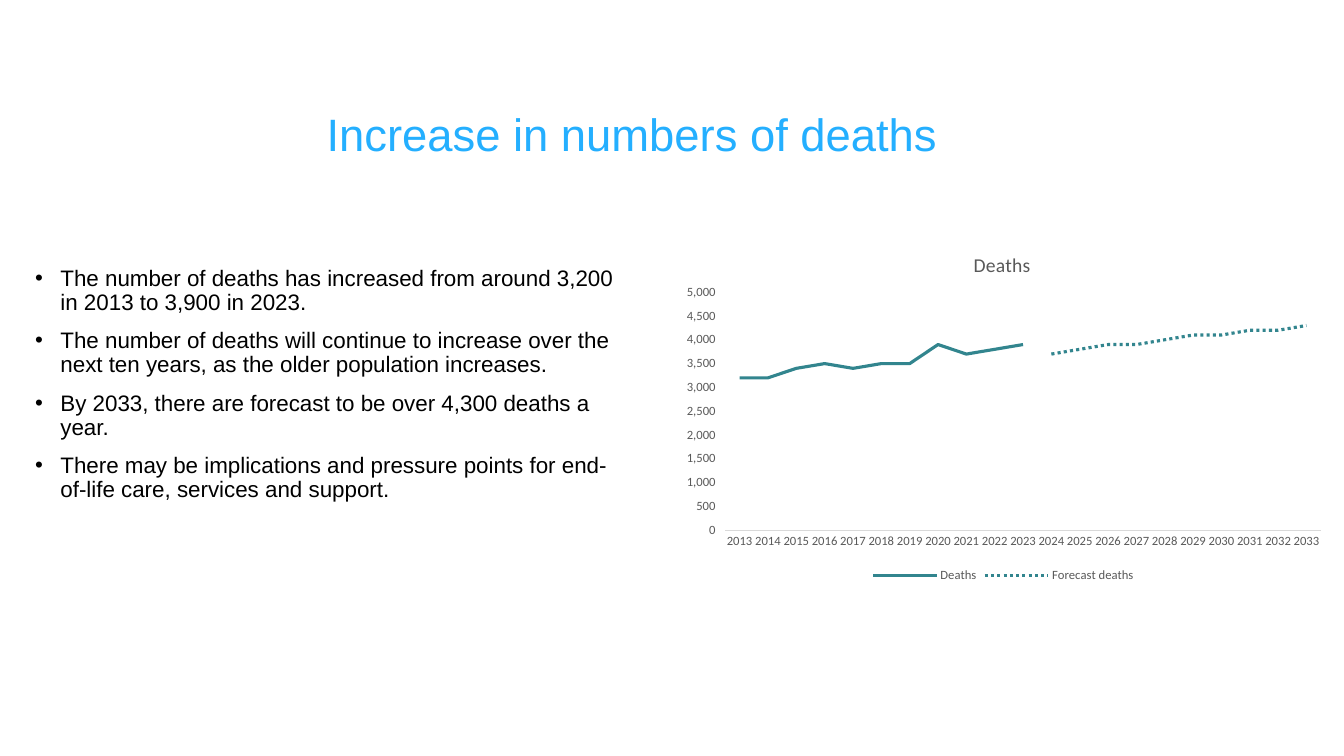
from lxml.etree import SubElement
from pptx import Presentation
from pptx.chart.data import CategoryChartData
from pptx.dml.color import RGBColor
from pptx.enum.chart import XL_CHART_TYPE as ChartType
from pptx.enum.chart import XL_LEGEND_POSITION as LegendPosition
from pptx.enum.chart import XL_TICK_MARK as TickMark
from pptx.enum.dml import MSO_LINE_DASH_STYLE as Dash
from pptx.enum.text import MSO_ANCHOR as Anchor
from pptx.oxml import parse_xml
from pptx.oxml.ns import nsdecls, qn
from pptx.util import Inches, Pt

TEAL, GREY = "32858E", "595959"
TITLE_BOX = (23.56, 15.2, 74.72, 5.87)
BULLET_BOX = (1.88, 34.67, 45.31, 36.27)
CHART_BOX = (50.04, 30.4, 49.21, 47.2)
POINTS = (
    "The number of deaths has increased from around 3,200 in 2013 to 3,900 in 2023.",
    "The number of deaths will continue to increase over the next ten years, as the older population increases.",
    "By 2033, there are forecast to be over 4,300 deaths a year.",
    "There may be implications and pressure points for end-of-life care, services and support.",
)
RECORDED = [3200, 3200, 3400, 3500, 3400, 3500, 3500, 3900, 3700, 3800, 3900]
FORECAST = [3700, 3800, 3900, 3900, 4000, 4100, 4100, 4200, 4200, 4300]


def colour(value):
    """Turn a hex string into a colour."""
    return RGBColor.from_string(value)


def apply(target, **values):
    """Set each named format value on the target."""
    for name, value in values.items():
        setattr(target, name, value)


def style_font(font, size, shade, name):
    """Set the size, colour and typeface of a font."""
    apply(font, size=Pt(size), name=name, bold=False)
    font.color.rgb = colour(shade)


def place(deck, box):
    """Turn percentages of the slide into lengths."""
    sides = (deck.slide_width, deck.slide_height) * 2
    return [int(side * share / 100) for side, share in zip(sides, box)]


def add_bullet(para):
    """Give a paragraph a hanging round bullet."""
    properties = para._p.get_or_add_pPr()
    apply_indent = {"marL": Inches(0.25), "indent": Inches(-0.25)}
    for name, value in apply_indent.items():
        properties.set(name, str(value))
    SubElement(properties, qn("a:buFont")).set("typeface", "Arial")
    SubElement(properties, qn("a:buChar")).set("char", "•")


def add_text(deck, page, box, lines, size, shade, anchor=Anchor.TOP, bullets=False):
    """Write paragraphs in a wrapped text box."""
    frame = page.shapes.add_textbox(*place(deck, box)).text_frame
    apply(frame, word_wrap=True, vertical_anchor=anchor)
    for index, line in enumerate(lines):
        para = frame.add_paragraph() if index else frame.paragraphs[0]
        apply(para, line_spacing=0.9, space_before=Pt(10 if index else 0))
        if bullets:
            add_bullet(para)
        span = para.add_run()
        span.text = line
        style_font(span.font, size, shade, "Arial")


def set_layout(element, index, **shares):
    """Fix a chart part at shares of the chart's size."""
    for old in element.findall(qn("c:layout")):
        element.remove(old)
    target = '<c:layoutTarget val="inner"/>' if "w" in shares else ""
    modes = "".join(f'<c:{axis}Mode val="edge"/>' for axis in "xy")
    sizes = "".join(f'<c:{name} val="{share}"/>' for name, share in shares.items())
    element.insert(index, parse_xml(
        f'<c:layout {nsdecls("c")}><c:manualLayout>{target}{modes}{sizes}'
        "</c:manualLayout></c:layout>"))


def style_axes(chart):
    """Format the year axis and the count axis."""
    years, counts = chart.category_axis, chart.value_axis
    apply(years, major_tick_mark=TickMark.NONE, has_major_gridlines=False)
    apply(counts, major_tick_mark=TickMark.OUTSIDE, has_major_gridlines=False,
          minimum_scale=0, maximum_scale=5000, major_unit=500)
    apply(counts.tick_labels, number_format="#,##0", number_format_is_linked=False)
    for axis in (years, counts):
        style_font(axis.tick_labels.font, 9, GREY, "Calibri")
    years._element.find(qn("c:txPr")).find(qn("a:bodyPr")).set("rot", "-60000000")
    years.format.line.color.rgb = colour("D9D9D9")
    years.format.line.width = Pt(0.75)
    counts.format.line.fill.background()


def add_deaths_chart(deck, page, box):
    """Draw recorded deaths and their dotted forecast."""
    data = CategoryChartData(number_format="#,##0")
    data.categories = [str(year) for year in range(2013, 2034)]
    data.add_series("Deaths", RECORDED + [None] * len(FORECAST))
    data.add_series("Forecast deaths", [None] * len(RECORDED) + FORECAST)
    chart = page.shapes.add_chart(ChartType.LINE, *place(deck, box), data).chart
    style_font(chart.font, 10, "000000", "Calibri")
    apply(chart, has_title=True, has_legend=True)
    apply(chart.legend, position=LegendPosition.BOTTOM, include_in_layout=False)
    style_font(chart.legend.font, 9, GREY, "Calibri")
    title = chart.chart_title
    title.text_frame.text = "Deaths"
    style_font(title.text_frame.paragraphs[0].runs[0].font, 14, GREY, "Calibri")
    set_layout(title._element, 1, x=0.45, y=0.05)
    plot = chart.plots[0]
    plot.vary_by_categories = False
    set_layout(plot._element.getparent(), 0, x=0.08, y=0.175, w=0.9, h=0.667)
    style_axes(chart)
    for series, dash in zip(plot.series, (Dash.SOLID, Dash.ROUND_DOT)):
        series.smooth = False
        series.format.line.color.rgb = colour(TEAL)
        apply(series.format.line, width=Pt(2.25), dash_style=dash)


def main():
    """Build and save the slide."""
    deck = Presentation()
    apply(deck, slide_width=Inches(13.33), slide_height=Inches(7.5))
    page = deck.slides.add_slide(deck.slide_layouts[6])
    add_text(deck, page, TITLE_BOX, ["Increase in numbers of deaths"], 32.4, "24AFFF", Anchor.MIDDLE)
    add_text(deck, page, BULLET_BOX, POINTS, 16, "000000", bullets=True)
    add_deaths_chart(deck, page, CHART_BOX)
    deck.save("out.pptx")


if __name__ == "__main__":
    main()
